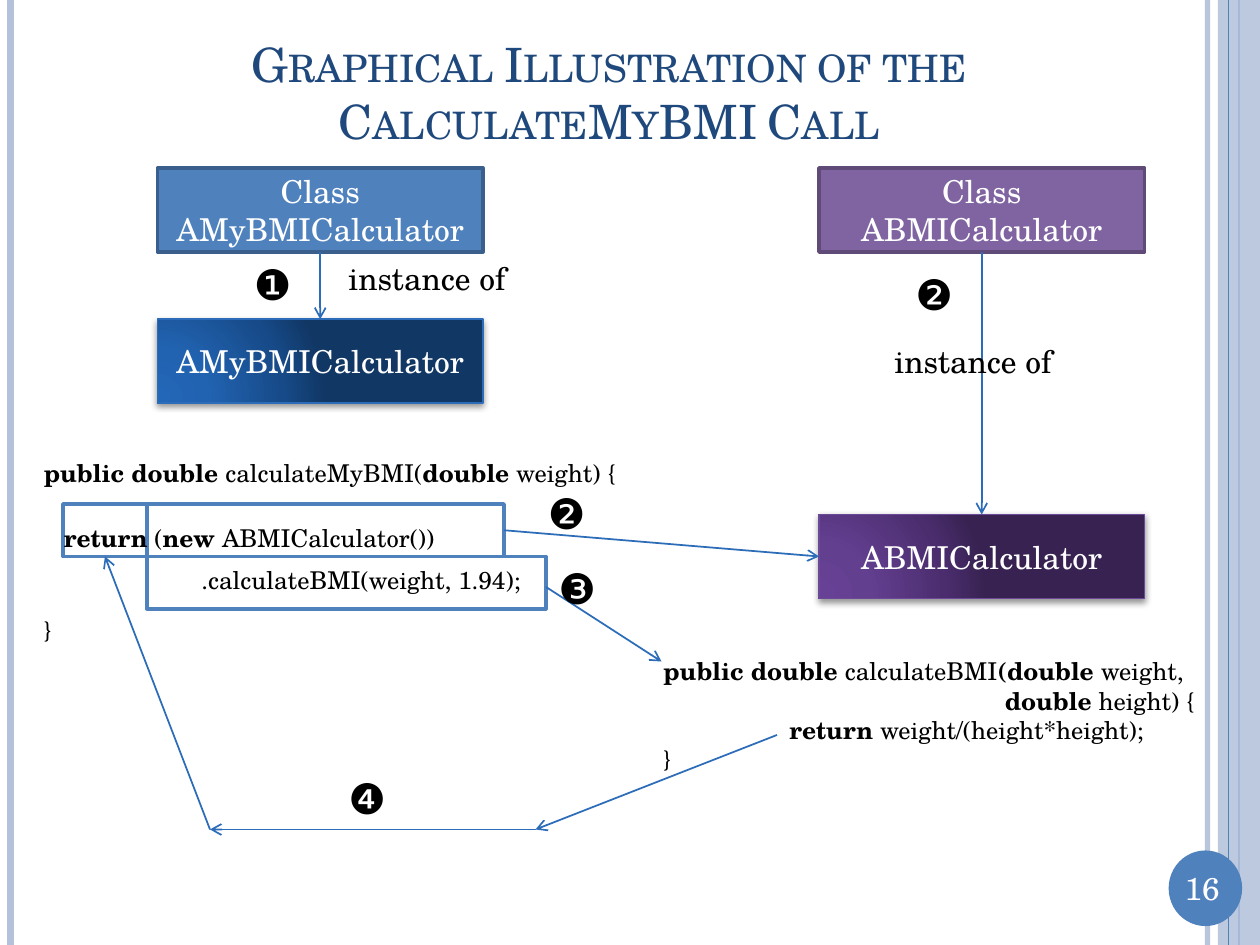
from lxml import etree
from pptx import Presentation
from pptx.dml.color import RGBColor
from pptx.enum.shapes import MSO_CONNECTOR, MSO_SHAPE
from pptx.enum.text import MSO_ANCHOR, PP_ALIGN
from pptx.oxml import parse_xml
from pptx.oxml.ns import nsdecls, qn
from pptx.util import Inches, Pt

RECT, OVAL = MSO_SHAPE.RECTANGLE, MSO_SHAPE.OVAL
LINE = MSO_CONNECTOR.STRAIGHT
MIDDLE, TOP = MSO_ANCHOR.MIDDLE, MSO_ANCHOR.TOP
LEFT, CENTER = PP_ALIGN.LEFT, PP_ALIGN.CENTER
COLS, ROWS = 120, 90
BOTTOM_SIDE, RIGHT_SIDE, LEFT_SIDE, TOP_SIDE = 2, 3, 1, 0
BLUE, PALE, ARROW = "4F81BD", "B3C1DB", "2C6CB9"
WHITE, BLACK, NAVY = "FFFFFF", "000000", "1F497D"


def paint(target, color, alpha=100):
    target.solid()
    target.fore_color.rgb = RGBColor.from_string(color)
    if alpha < 100:
        node = target._xPr.find(".//" + qn("a:srgbClr"))
        etree.SubElement(node, qn("a:alpha"), val=str(alpha * 1000))


class Board:
    font = "TeX Gyre Schola"

    def __init__(self, deck):
        self.slide = deck.slides.add_slide(deck.slide_layouts[6])
        self.shapes = self.slide.shapes
        self.wide = deck.slide_width / COLS
        self.high = deck.slide_height / ROWS

    def place(self, x, y):
        return round(x * self.wide), round(y * self.high)

    def letter(self, frame, lines, size, color, align, anchor):
        frame.word_wrap = True
        frame.vertical_anchor = anchor
        for i, (indent, line) in enumerate(lines):
            para = frame.paragraphs[0] if i == 0 else frame.add_paragraph()
            para.alignment = align
            para.font.name = self.font
            para.font.size = Pt(size)
            para.font.color.rgb = RGBColor.from_string(color)
            if indent:
                props = para._p.get_or_add_pPr()
                props.set("marL", str(Inches(indent)))
                props.set("indent", "0")
            for k, part in enumerate(line.split("|")):
                if part:
                    run = para.add_run()
                    run.text = part
                    if k % 2:
                        run.font.bold = True

    def text(self, x, y, w, h, lines, size=18, color=BLACK, align=LEFT,
             anchor=TOP, wrap=True):
        box = self.shapes.add_textbox(*self.place(x, y), *self.place(w, h))
        if isinstance(lines, str):
            lines = [(0, lines)]
        self.letter(box.text_frame, lines, size, color, align, anchor)
        box.text_frame.word_wrap = wrap
        return box

    def box(self, x, y, w, h, fill=None, edge=None, width=2, label=None,
            kind=RECT, alpha=100):
        box = self.shapes.add_shape(kind, *self.place(x, y), *self.place(w, h))
        box.shadow.inherit = False
        if fill:
            paint(box.fill, fill, alpha)
        else:
            box.fill.background()
        if edge:
            paint(box.line.fill, edge)
            box.line.width = Pt(width)
        else:
            box.line.fill.background()
        if label:
            self.letter(box.text_frame, [(0, label)], 18, WHITE, CENTER, MIDDLE)
        return box

    def object(self, x, y, w, h, label, edge, tones):
        box = self.box(x, y, w, h, None, edge, 1, label)
        props = box._element.spPr
        stops = "".join(
            f'<a:gs pos="{pos}000"><a:srgbClr val="{tone}"/></a:gs>'
            for pos, tone in zip((0, 30, 75, 100), tones))
        blend = parse_xml(
            f'<a:gradFill {nsdecls("a")} rotWithShape="1">'
            f'<a:gsLst>{stops}</a:gsLst><a:path path="circle">'
            '<a:fillToRect l="5000" t="100000" r="120000" b="10000"/>'
            '</a:path></a:gradFill>')
        props.replace(props.find(qn("a:noFill")), blend)
        shade = parse_xml(
            f'<a:outerShdw {nsdecls("a")} blurRad="50800" dist="20320" '
            'dir="5400000" rotWithShape="0"><a:srgbClr val="000000">'
            '<a:alpha val="42000"/></a:srgbClr></a:outerShdw>')
        props.find(qn("a:effectLst")).append(shade)
        return box

    def line(self, start, end, color, width, alpha=100):
        line = self.shapes.add_connector(
            LINE, *self.place(*start), *self.place(*end))
        paint(line.line.fill, color, alpha)
        line.line.width = Pt(width)
        etree.SubElement(line._element.spPr, qn("a:effectLst"))
        return line

    def arrow(self, start, end, source=None, target=None):
        line = self.line(start, end, ARROW, 1)
        etree.SubElement(line.line._get_or_add_ln(), qn("a:tailEnd"),
                         type="arrow")
        if source:
            line.begin_connect(*source)
        if target:
            line.end_connect(*target)


def main():
    deck = Presentation()
    deck.slide_width, deck.slide_height = Inches(10), Inches(7.5)
    board = Board(deck)

    for col, color, width, alpha in (
            (115, PALE, 3, 93), (1, PALE, 4.5, 100), (118, BLUE, 1.5, 100)):
        board.line((col, 0), (col, ROWS), color, width, alpha)
    board.box(116, 0, 4, ROWS, PALE, alpha=87)
    board.line((117, 0), (117, ROWS), BLUE, 0.75)
    board.box(111.3, 81, 7, 7.2, BLUE, kind=OVAL)
    board.text(111, 82.2, 7, 4.8, "16", 18, WHITE, CENTER)

    title = board.text(6, 3.6, 104, 10.4,
                       "Graphical Illustration of the CalculateMyBMI Call",
                       27, NAVY, CENTER, MIDDLE)
    title.text_frame.paragraphs[0].runs[0]._r.get_or_add_rPr().set(
        "cap", "small")

    pairs = (
        ("AMyBMICalculator", 15, 30.4, BLUE, "3A5F8C", ARROW,
         ("2367B8", "2263B1", "164A88", "113765")),
        ("ABMICalculator", 78, 49, "8064A2", "5F4A78", "6C4898",
         ("674195", "633F90", "4B2D6E", "372251")))
    for name, col, row, fill, edge, rim, tones in pairs:
        kind = board.box(col, 16, 31, 8, fill, edge, label="Class " + name)
        made = board.object(col, row, 31, 8, name, rim, tones)
        board.arrow((col + 15.5, 24), (col + 15.5, row),
                    (kind, BOTTOM_SIDE), (made, TOP_SIDE))

    board.box(14, 53, 38, 5, edge=BLUE)
    fresh = board.box(14, 48, 34, 5, edge=BLUE)
    result = board.box(6, 48, 8, 5, edge=BLUE)

    board.arrow((48, 50.5), (78, 53), (fresh, RIGHT_SIDE), (made, LEFT_SIDE))
    board.arrow((52, 55.9), (63, 63))
    board.arrow((74, 70), (51, 79))
    board.arrow((51, 79), (20, 79))
    board.arrow((20, 79), (10, 53), target=(result, BOTTOM_SIDE))

    for col, row, mark in ((23, 24, "❶"), (51, 45.8, "❷"), (86, 25, "❷"),
                           (52, 53, "❸"), (32, 73, "❹")):
        board.text(col, row, 6, 6, mark, 24, wrap=False)
    for col, row in ((32, 24.1), (84, 32)):
        board.text(col, row, 17.5, 4.8, "instance of", wrap=False)

    for col, row, wide, high, code in (
            (3, 43, 59, 4,
             "|public double |calculateMyBMI(|double| weight) {"),
            (4.9, 49.2, 45, 4, "|return| (|new |ABMICalculator())"),
            (6, 53.2, 45, 4, [(1, ".calculateBMI(weight, 1.94);")]),
            (3, 58, 5, 4, "}"),
            (62, 61.9, 56, 12.5, [
                (0, "|public double |calculateBMI|(double| weight,"),
                (2.71, "|double| height) {"),
                (1, "|return| weight/(height*height);"),
                (0, "}")])):
        board.text(col, row, wide, high, code, 14)

    deck.save("out.pptx")


if __name__ == "__main__":
    main()
